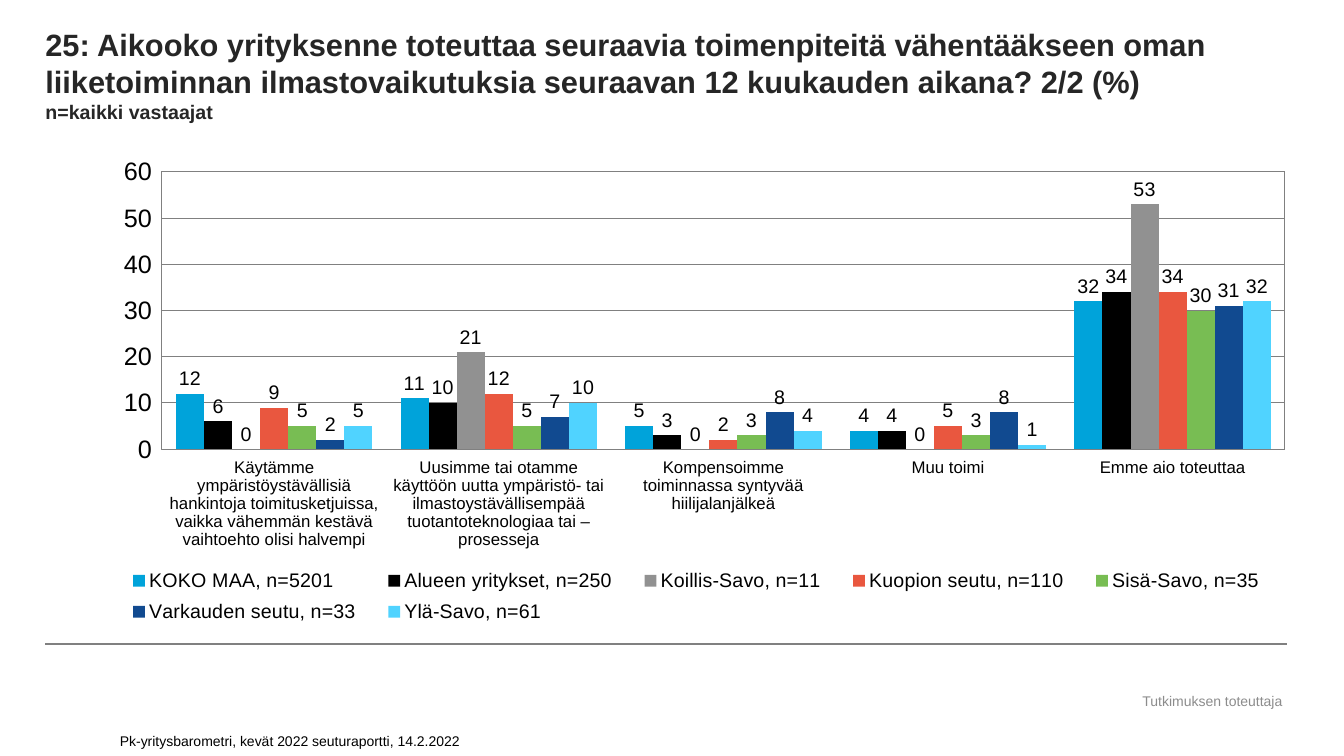
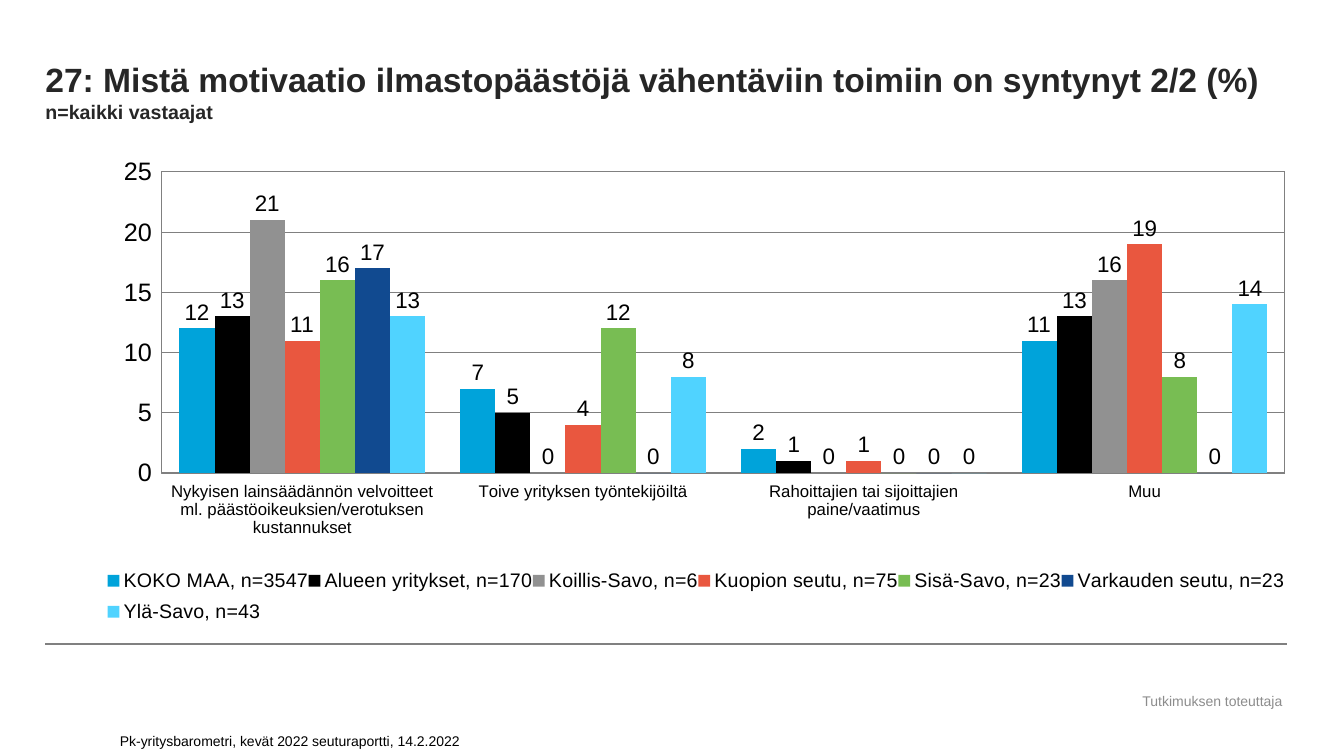
from lxml import etree
from pptx import Presentation
from pptx.chart.data import CategoryChartData
from pptx.dml.color import RGBColor
from pptx.enum.chart import XL_CHART_TYPE as ChartType
from pptx.enum.chart import XL_LABEL_POSITION as LabelPosition
from pptx.enum.chart import XL_LEGEND_POSITION as LegendPosition
from pptx.enum.chart import XL_TICK_LABEL_POSITION as TickLabelPosition
from pptx.enum.chart import XL_TICK_MARK as TickMark
from pptx.enum.shapes import MSO_CONNECTOR as Connector
from pptx.enum.text import MSO_ANCHOR as Anchor
from pptx.enum.text import MSO_AUTO_SIZE as AutoSize
from pptx.enum.text import PP_ALIGN as Align
from pptx.oxml import parse_xml
from pptx.oxml.ns import nsdecls, qn
from pptx.util import Inches, Pt

FONT = "Arial"
BLACK, TITLE, GRAY, LINE = "000000", "262626", "8C8C8C", "808080"
REGIONS = [
    ("KOKO MAA", "00A3DA"),
    ("Alueen yritykset", "000000"),
    ("Koillis-Savo", "919191"),
    ("Kuopion seutu", "E9573F"),
    ("Sisä-Savo", "78BD53"),
    ("Varkauden seutu", "114A90"),
    ("Ylä-Savo", "50D3FF"),
]
LEFT, WIDTH = 0.45, 12.3
CAPTIONS = [
    ("Tutkimuksen toteuttaja", (11.16, 6.82, 1.73, 0.26), Anchor.MIDDLE, Align.CENTER, GRAY),
    ("Pk-yritysbarometri, kevät 2022 seuturaportti, 14.2.2022",
     (1.09, 7.13, 5.41, 0.35), Anchor.BOTTOM, Align.LEFT, BLACK),
]

QUESTIONS = [
    {
        "title": "25: Aikooko yrityksenne toteuttaa seuraavia toimenpiteitä vähentääkseen "
                 "oman liiketoiminnan ilmastovaikutuksia seuraavan 12 kuukauden aikana? 2/2 (%)",
        "title_size": 22,
        "label_size": 14,
        "maximum": 60,
        "step": 10,
        "plot_height": 0.583,
        "categories": [
            "Käytämme ympäristöystävällisiä hankintoja toimitusketjuissa, "
            "vaikka vähemmän kestävä vaihtoehto olisi halvempi",
            "Uusimme tai otamme käyttöön uutta ympäristö- tai "
            "ilmastoystävällisempää tuotantoteknologiaa tai –prosesseja",
            "Kompensoimme toiminnassa syntyvää hiilijalanjälkeä",
            "Muu toimi",
            "Emme aio toteuttaa",
        ],
        "counts": [5201, 250, 11, 110, 35, 33, 61],
        "values": [
            (12, 11, 5, 4, 32),
            (6, 10, 3, 4, 34),
            (0, 21, 0, 0, 53),
            (9, 12, 2, 5, 34),
            (5, 5, 3, 3, 30),
            (2, 7, 8, 8, 31),
            (5, 10, 4, 1, 32),
        ],
    },
    {
        "title": "27: Mistä motivaatio ilmastopäästöjä vähentäviin toimiin on syntynyt 2/2 (%)",
        "title_size": 24,
        "label_size": 16,
        "maximum": 25,
        "step": 5,
        "plot_height": 0.633,
        "categories": [
            "Nykyisen lainsäädännön velvoitteet ml. päästöoikeuksien/verotuksen kustannukset",
            "Toive yrityksen työntekijöiltä",
            "Rahoittajien tai sijoittajien paine/vaatimus",
            "Muu",
        ],
        "counts": [3547, 170, 6, 75, 23, 23, 43],
        "values": [
            (12, 7, 2, 11),
            (13, 5, 1, 13),
            (21, 0, 0, 16),
            (11, 4, 1, 19),
            (16, 12, 0, 8),
            (17, 0, 0, 0),
            (13, 8, 0, 14),
        ],
    },
]


def color(value):
    return RGBColor.from_string(value)


def set_layout(element, index, inner, box):
    for old in element.findall(qn("c:layout")):
        element.remove(old)
    target = '<c:layoutTarget val="inner"/>' if inner else ""
    modes = "".join(f'<c:{axis}Mode val="edge"/>' for axis in "xy")
    sizes = "".join(f'<c:{name} val="{value}"/>' for name, value in zip("xywh", box))
    element.insert(index, parse_xml(
        f'<c:layout {nsdecls("c")}><c:manualLayout>{target}{modes}{sizes}'
        "</c:manualLayout></c:layout>"))


presentation = Presentation()
presentation.slide_width = Inches(13.33)
presentation.slide_height = Inches(7.5)

for question in QUESTIONS:
    slide = presentation.slides.add_slide(presentation.slide_layouts[5])

    title = slide.shapes.title
    title.left, title.top = Inches(LEFT), Inches(0)
    title.width, title.height = Inches(WIDTH), Inches(1.22)
    frame = title.text_frame
    frame.auto_size = AutoSize.NONE
    frame.word_wrap = True
    frame.vertical_anchor = Anchor.BOTTOM
    frame.margin_left = frame.margin_top = frame.margin_right = frame.margin_bottom = 0
    paragraph = frame.paragraphs[0]
    paragraph.alignment = Align.LEFT
    paragraph.font.name = FONT
    paragraph.font.bold = True
    paragraph.font.color.rgb = color(TITLE)
    run = paragraph.add_run()
    run.text = question["title"]
    run.font.size = Pt(question["title_size"])
    paragraph.add_line_break()
    run = paragraph.add_run()
    run.text = "n=kaikki vastaajat"
    run.font.size = Pt(14)

    rule = slide.shapes.add_connector(
        Connector.STRAIGHT, Inches(LEFT), Inches(6.39), Inches(12.76), Inches(6.39))
    rule.line.color.rgb = color(LINE)
    rule.line.width = Pt(1.5)
    etree.SubElement(rule._element.spPr, qn("a:effectLst"))

    for text, box, anchor, alignment, text_color in CAPTIONS:
        caption = slide.shapes.add_textbox(*map(Inches, box))
        frame = caption.text_frame
        frame.word_wrap = True
        frame.vertical_anchor = anchor
        paragraph = frame.paragraphs[0]
        paragraph.text = text
        paragraph.alignment = alignment
        paragraph.font.name = FONT
        paragraph.font.size = Pt(10)
        paragraph.font.color.rgb = color(text_color)

    data = CategoryChartData()
    data.categories = question["categories"]
    for (region, _), count, values in zip(REGIONS, question["counts"], question["values"]):
        data.add_series(f"{region}, n={count}", values)
    chart = slide.shapes.add_chart(
        ChartType.COLUMN_CLUSTERED, Inches(LEFT), Inches(1.55),
        Inches(WIDTH), Inches(4.72), data).chart
    chart.has_title = False
    chart.font.name = FONT
    chart.font.size = Pt(18)
    chart.font.color.rgb = color(BLACK)

    plot = chart.plots[0]
    plot.gap_width = 100
    plot.overlap = 0
    plot.vary_by_categories = False
    for series, (_, fill) in zip(plot.series, REGIONS):
        series.format.fill.solid()
        series.format.fill.fore_color.rgb = color(fill)
        series.invert_if_negative = False
    plot.has_data_labels = True
    labels = plot.data_labels
    labels.show_value = True
    labels.position = LabelPosition.OUTSIDE_END
    labels.number_format = "#,##0"
    labels.number_format_is_linked = False
    labels.font.size = Pt(question["label_size"])
    labels.font.name = FONT
    labels.font.color.rgb = color(BLACK)

    category_axis, value_axis = chart.category_axis, chart.value_axis
    for axis, size in ((category_axis, 12), (value_axis, 18)):
        axis.major_tick_mark = axis.minor_tick_mark = TickMark.NONE
        axis.tick_label_position = TickLabelPosition.LOW
        axis.tick_labels.font.size = Pt(size)
        axis.format.line.color.rgb = color(LINE)
        axis.format.line.width = Pt(0.75)
    value_axis.minimum_scale = 0
    value_axis.maximum_scale = question["maximum"]
    value_axis.major_unit = question["step"]
    value_axis.has_major_gridlines = True
    value_axis.major_gridlines.format.line.color.rgb = color(LINE)
    value_axis.major_gridlines.format.line.width = Pt(0.75)

    chart.has_legend = True
    legend = chart.legend
    legend.position = LegendPosition.RIGHT
    legend.include_in_layout = False
    legend.font.size = Pt(14)
    legend.font.name = FONT
    legend.font.color.rgb = color(BLACK)
    set_layout(legend._element, 1, False, (0.05, 0.85, 0.95, 0.15))

    plot_area = chart._chartSpace.chart.plotArea
    set_layout(plot_area, 0, True, (0.094, 0.033, 0.906, question["plot_height"]))
    plot_area.append(parse_xml(
        f'<c:spPr {nsdecls("c", "a")}><a:noFill/><a:ln w="9525"><a:solidFill>'
        f'<a:srgbClr val="{LINE}"/></a:solidFill></a:ln></c:spPr>'))

presentation.save("out.pptx")
